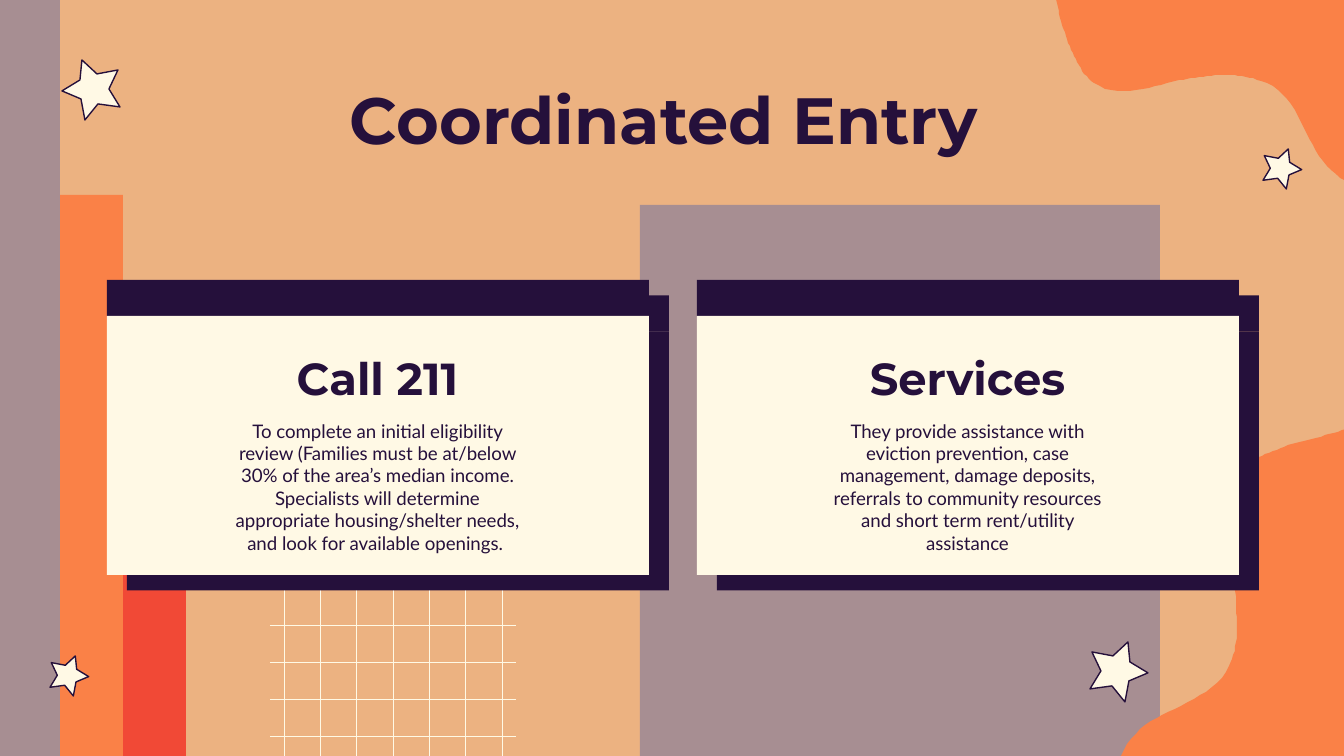
from dataclasses import dataclass

from lxml import etree
from pptx import Presentation
from pptx import util as u
from pptx.dml.color import RGBColor
from pptx.enum import shapes, text
from pptx.oxml.ns import qn

PX = 914400 / 134.4


@dataclass(frozen=True)
class Theme:
    sand: str = "ECB281"
    cream: str = "FFF9E5"
    ink: str = "25103B"
    mauve: str = "A78E92"
    orange: str = "FA8147"
    red: str = "F14936"
    heading_font: str = "Montserrat"
    body_font: str = "Lato"
    title_size: int = 35
    heading_size: int = 24
    body_size: int = 10


THEME = Theme()

BLOCKS = [
    (-4, 0, 64, 758, THEME.mauve),
    (60, 195, 63, 563, THEME.orange),
    (123, 469, 63, 289, THEME.red),
    (640, 205, 520, 597, THEME.mauve),
]

LOWER_BLOB = [
    (1118, 770),
    (1121, 740), (1145, 723), (1168, 712),
    (1194, 699), (1223, 688), (1232, 659),
    (1238, 642), (1238, 625), (1236, 609),
    (1236, 591), (1234, 574), (1228, 556),
    (1223, 532), (1214, 501), (1230, 478),
    (1238, 466), (1253, 460), (1265, 454),
    (1281, 448), (1295, 442), (1312, 439),
    (1329, 434), (1347, 430), (1364, 422),
]
UPPER_BLOB = [
    (1364, 187),
    (1337, 184), (1321, 161), (1310, 140),
    (1298, 116), (1288, 89), (1261, 81),
    (1246, 75), (1231, 75), (1215, 75),
    (1199, 77), (1183, 79), (1167, 83),
    (1144, 89), (1116, 98), (1094, 83),
    (1083, 75), (1077, 62), (1071, 50),
    (1066, 35), (1060, 22), (1058, 7),
    (1054, -9), (1050, -27), (1043, -43),
]

STAR_WIDTH = 58
STAR = [(38, 0), (40, 20), (58, 31), (39, 39), (35, 60),
        (22, 44), (0, 47), (11, 29), (2, 10), (23, 14)]
STARS = [(50, 656, 2 / 3, False), (62, 60, 1, True),
         (1090, 642, 1, False), (1263, 149, 2 / 3, False)]

CARDS = [
    (697, "Services",
     "They provide assistance with eviction prevention, case management, "
     "damage deposits, referrals to community resources and short term "
     "rent/utility assistance"),
    (107, "Call 211",
     "To complete an initial eligibility review (Families must be at/below "
     "30% of the area’s median income. Specialists will determine appropriate "
     "housing/shelter needs, and look for available openings. "),
]


def px(*lengths):
    return [u.Emu(round(length * PX)) for length in lengths]


def paint(shape, fill, line=None):
    shape.shadow.inherit = False
    shape.fill.solid()
    shape.fill.fore_color.rgb = RGBColor.from_string(fill)
    if line:
        shape.line.color.rgb = RGBColor.from_string(line)
        shape.line.width = u.Pt(0.75)
    else:
        shape.line.fill.background()


def add_block(parent, left, top, width, height, fill):
    block = parent.add_shape(shapes.MSO_SHAPE.RECTANGLE, *px(left, top, width, height))
    paint(block, fill)
    return block


def add_outline(slide, points, fill, line=None, scale=1, origin=(0, 0)):
    builder = slide.shapes.build_freeform(*points[0], scale=PX * scale)
    builder.add_line_segments(points[1:], close=True)
    paint(builder.convert_to_shape(*px(*origin)), fill, line)


def bezier_points(knots, steps=12):
    points = [knots[0]]
    for index in range(0, len(knots) - 1, 3):
        curve = knots[index:index + 4]
        for step in range(1, steps + 1):
            t = step / steps
            weights = ((1 - t) ** 3, 3 * t * (1 - t) ** 2, 3 * t * t * (1 - t), t ** 3)
            points.append(tuple(sum(w * knot[axis] for w, knot in zip(weights, curve))
                                for axis in (0, 1)))
    return points


def add_blob(slide, knots, corner):
    add_outline(slide, bezier_points(knots) + [corner], THEME.orange)


def add_star(slide, left, top, scale, mirrored):
    points = [(STAR_WIDTH - x, y) for x, y in STAR] if mirrored else STAR
    add_outline(slide, points, THEME.cream, THEME.ink, scale, (left, top))


def add_grid_line(slide, *ends):
    line = slide.shapes.add_connector(shapes.MSO_CONNECTOR.STRAIGHT, *px(*ends))
    line.line.color.rgb = RGBColor.from_string(THEME.cream)
    line.line.width = u.Pt(0.4)
    etree.SubElement(line.element.spPr, qn("a:effectLst"))


def add_grid(slide):
    for column in range(7):
        x = 284 + column * 218 // 6
        add_grid_line(slide, x, 576, x, 823)
    for row in range(5):
        y = 589 + row * 147 // 4
        add_grid_line(slide, 270, y, 516, y)


def add_hard_shadow(shape):
    effects = shape.element.spPr.find(qn("a:effectLst"))
    shadow = etree.SubElement(effects, qn("a:outerShdw"), blurRad="0",
                              dist=str(u.Pt(13.5)), dir=str(38 * 60000),
                              algn="bl", rotWithShape="0")
    etree.SubElement(shadow, qn("a:srgbClr"), val=THEME.ink)


def write(shape, words, size, font, bold=False, anchor=text.MSO_ANCHOR.TOP):
    frame = shape.text_frame
    frame.text = words
    frame.word_wrap = True
    frame.auto_size = text.MSO_AUTO_SIZE.NONE
    frame.vertical_anchor = anchor
    frame.margin_left = frame.margin_right = u.Inches(0.1)
    frame.margin_top = frame.margin_bottom = u.Inches(0.1)
    paragraph = frame.paragraphs[0]
    paragraph.alignment = text.PP_ALIGN.CENTER
    run_font = paragraph.runs[0].font
    run_font.name = font
    run_font.size = u.Pt(size)
    run_font.bold = bold
    run_font.color.rgb = RGBColor.from_string(THEME.ink)


def add_card_panel(slide, left):
    group = slide.shapes.add_group_shape()
    for top, height, fill in ((280, 36, THEME.ink), (316, 259, THEME.cream)):
        add_hard_shadow(add_block(group.shapes, left, top, 542, height, fill))


def add_card_text(slide, left, heading, body):
    heading_box = slide.shapes.add_textbox(*px(left + 108, 343, 325, 75))
    write(heading_box, heading, THEME.heading_size, THEME.heading_font,
          True, text.MSO_ANCHOR.BOTTOM)
    body_box = slide.shapes.add_textbox(*px(left + 108, 406, 325, 145))
    write(body_box, body, THEME.body_size, THEME.body_font)


def place_title(slide, words):
    title = slide.shapes.title
    title.left, title.top, title.width, title.height = px(107, 66, 1133, 85)
    write(title, words, THEME.title_size, THEME.heading_font, True)
    slide.shapes.element.append(title.element)


def main():
    presentation = Presentation()
    presentation.slide_width, presentation.slide_height = px(1344, 756)
    slide = presentation.slides.add_slide(presentation.slide_layouts[5])
    slide.background.fill.solid()
    slide.background.fill.fore_color.rgb = RGBColor.from_string(THEME.sand)
    add_grid(slide)
    for block in BLOCKS:
        add_block(slide.shapes, *block)
    add_blob(slide, LOWER_BLOB, (1364, 770))
    add_blob(slide, UPPER_BLOB, (1364, -43))
    for star in STARS:
        add_star(slide, *star)
    for left, _, _ in CARDS:
        add_card_panel(slide, left)
    place_title(slide, "Coordinated Entry ")
    for card in CARDS:
        add_card_text(slide, *card)
    presentation.save("out.pptx")


if __name__ == "__main__":
    main()
